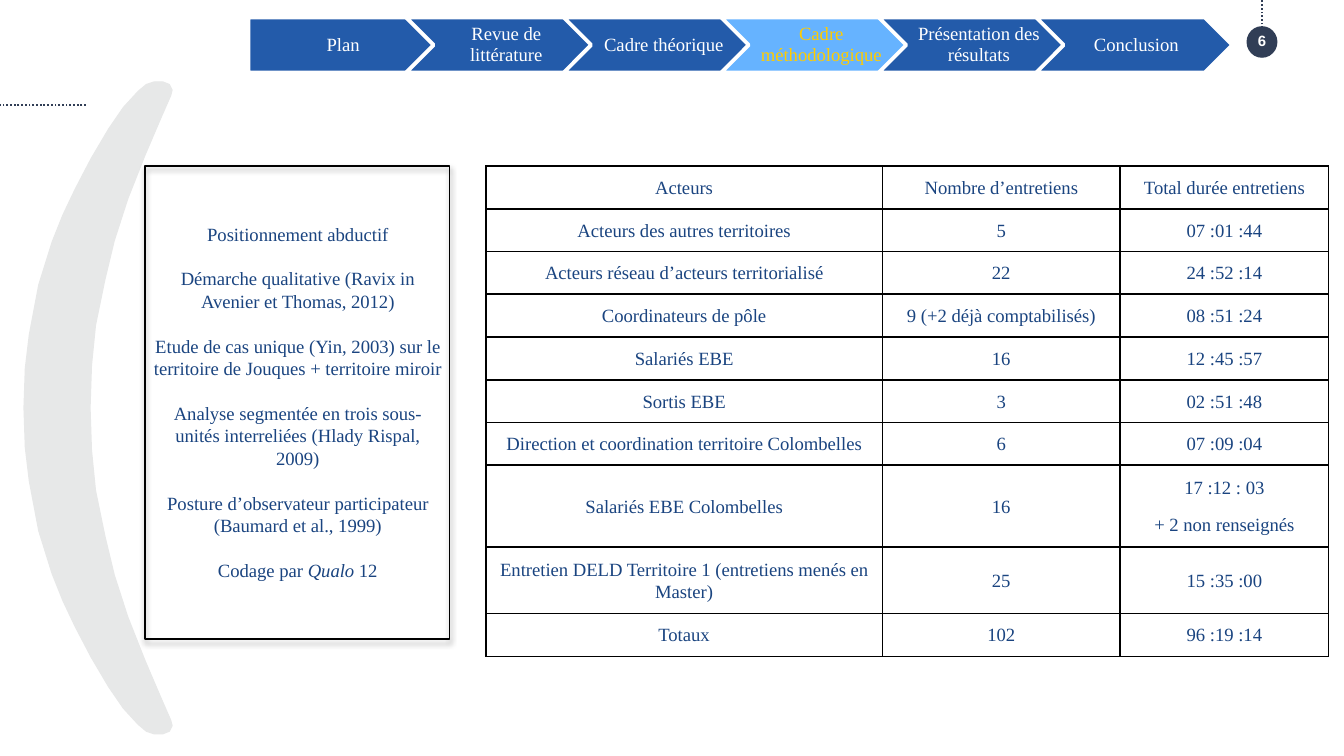
from lxml.etree import SubElement
from pptx import Presentation
from pptx.dml.color import RGBColor as Color
from pptx.enum.dml import MSO_LINE as Dash
from pptx.enum.shapes import MSO_CONNECTOR as Connector, MSO_SHAPE as Shape
from pptx.enum.text import MSO_ANCHOR as Anchor, PP_ALIGN as Align
from pptx.oxml import parse_xml
from pptx.oxml.ns import nsdecls, qn
from pptx.util import Inches, Pt

WHITE = Color(0xFF, 0xFF, 0xFF)
BLACK = Color(0x00, 0x00, 0x00)
NAVY = Color(0x31, 0x3E, 0x56)
BLUE = Color(0x23, 0x5B, 0xAA)
SKY = Color(0x66, 0xB3, 0xFF)
GOLD = Color(0xFF, 0xCC, 0x00)
INK = Color(0x1A, 0x44, 0x80)
MIST = Color(0xE7, 0xE8, 0xE8)

COLUMNS, ROWS = 100, 56.25
UNIT = Inches(0.1)
FINE = 100

STEPS = ["Plan", "Revue de littérature", "Cadre théorique", "Cadre méthodologique",
         "Présentation des résultats", "Conclusion"]
CURRENT_STEP = "Cadre méthodologique"

METHOD = [
    "Positionnement abductif",
    "Démarche qualitative (Ravix in Avenier et Thomas, 2012)",
    "Etude de cas unique (Yin, 2003) sur le territoire de Jouques + territoire miroir",
    "Analyse segmentée en trois sous-unités interreliées (Hlady Rispal, 2009)",
    "Posture d’observateur participateur (Baumard et al., 1999)",
    "Codage par *Qualo* 12",
]

INTERVIEWS = [
    ("Acteurs", "Nombre d’entretiens", "Total durée entretiens"),
    ("Acteurs des autres territoires", "5", "07 :01 :44"),
    ("Acteurs réseau d’acteurs territorialisé", "22", "24 :52 :14"),
    ("Coordinateurs de pôle", "9 (+2 déjà comptabilisés)", "08 :51 :24"),
    ("Salariés EBE", "16", "12 :45 :57"),
    ("Sortis EBE", "3", "02 :51 :48"),
    ("Direction et coordination territoire Colombelles", "6", "07 :09 :04"),
    ("Salariés EBE Colombelles", "16", "17 :12 : 03\n+ 2 non renseignés"),
    ("Entretien DELD Territoire 1 (entretiens menés en Master)", "25", "15 :35 :00"),
    ("Totaux", "102", "96 :19 :14"),
]
COLUMN_WIDTHS = [29.5, 17.7, 15.5]
ROW_HEIGHTS = [0] * 6 + [2.7] + [0] * 3

ARC_MIDDLE = 30.35
ARC_UPPER_HALF = [
    (6.7, 30.3), (6.8, 27.2), (7.1, 24.2), (7.8, 20.8), (8.5, 17.9), (9.5, 14.8),
    (10.8, 11.5), (12, 8.7), (12.7, 7.1), (12.8, 6.7), (12.6, 6.3), (12.1, 6.1),
    (11.5, 6.1), (10.9, 6.3), (10.3, 6.8), (9.2, 8), (8.1, 9.6), (6.8, 11.8),
    (5.6, 14.1), (4.7, 16), (3.9, 18), (2.9, 21.2), (2.2, 24.9), (1.9, 27.4), (1.8, 30.3),
]


def grid(*lengths):
    return [int(length * UNIT) for length in lengths]


def write(frame, paragraphs, size=10, font="Times New Roman", color=INK, bold=None,
          spacing=None, before=0, after=0, insets=(0, 0, 0, 0)):
    frame.word_wrap = True
    frame.vertical_anchor = Anchor.MIDDLE
    (frame.margin_left, frame.margin_top,
     frame.margin_right, frame.margin_bottom) = grid(*insets)
    for index, text in enumerate(paragraphs):
        para = frame.add_paragraph() if index else frame.paragraphs[0]
        para.alignment = Align.CENTER
        para.line_spacing = spacing
        para.space_after = Pt(after)
        if index:
            para.space_before = Pt(before)
        for part, words in enumerate(text.split("*")):
            span = para.add_run()
            span.text = words
            span.font.size = Pt(size)
            span.font.name = font
            span.font.color.rgb = color
            span.font.bold = bold
            if part % 2:
                span.font.italic = True


class SlideBuilder:
    def __init__(self, deck):
        self.page = deck.slides.add_slide(deck.slide_layouts[6])
        self.shapes = self.page.shapes

    def paint(self, box, fill=None, line=None, width=1):
        box.shadow.inherit = False
        if fill is None:
            box.fill.background()
        else:
            box.fill.solid()
            box.fill.fore_color.rgb = fill
        if line is None:
            box.line.fill.background()
        else:
            box.line.color.rgb = line
            box.line.width = Pt(width)
        return box

    def shape(self, kind, place, **style):
        return self.paint(self.shapes.add_shape(kind, *grid(*place)), **style)

    def text(self, place, paragraphs, **style):
        write(self.shapes.add_textbox(*grid(*place)).text_frame, paragraphs, **style)

    def outline(self, points, **style):
        start, *others = [(x * FINE, y * FINE) for x, y in points]
        builder = self.shapes.build_freeform(*start, scale=UNIT / FINE)
        builder.add_line_segments(others, close=True)
        return self.paint(builder.convert_to_shape(), **style)

    def dotted_line(self, *ends):
        line = self.shapes.add_connector(Connector.STRAIGHT, *grid(*ends))
        line.line.color.rgb = NAVY
        line.line.width = Pt(1)
        line.line.dash_style = Dash.ROUND_DOT
        SubElement(line._element.spPr, qn("a:effectLst"))

    def shadow(self, box, blur, distance, alpha):
        effects = box._element.spPr.find(qn("a:effectLst"))
        effects.append(parse_xml(
            f'<a:outerShdw {nsdecls("a")} blurRad="{Pt(blur)}" dist="{Pt(distance)}" '
            f'dir="5400000" rotWithShape="0"><a:srgbClr val="{BLACK}">'
            f'<a:alpha val="{alpha * 1000}"/></a:srgbClr></a:outerShdw>'))

    def border(self, cell):
        properties = cell._tc.get_or_add_tcPr()
        for index, side in enumerate("LRTB"):
            properties.insert(index, parse_xml(
                f'<a:ln{side} {nsdecls("a")} w="{Pt(1)}"><a:solidFill>'
                f'<a:srgbClr val="{BLACK}"/></a:solidFill></a:ln{side}>'))

    def table(self, place, rows, widths, heights):
        holder = self.shapes.add_table(len(rows), len(widths), *grid(*place))
        table = holder.table
        table.first_row = table.horz_banding = False
        for column, width in zip(table.columns, grid(*widths)):
            column.width = width
        for row, height, texts in zip(table.rows, grid(*heights), rows):
            row.height = height
            for cell, text in zip(row.cells, texts):
                write(cell.text_frame, text.split("\n"), spacing=1.07, after=8)
                cell.vertical_anchor = Anchor.MIDDLE
                (cell.margin_left, cell.margin_top,
                 cell.margin_right, cell.margin_bottom) = grid(0.7, 0.7, 0.7, 0.7)
                cell.fill.background()
                self.border(cell)
        holder.height = grid(place[-1])[0]

    def steps(self, left, top, width, height, pitch):
        for index, name in enumerate(STEPS):
            active = name == CURRENT_STEP
            kind = Shape.CHEVRON if index else Shape.PENTAGON
            box = self.shape(kind, (left + index * pitch, top, width, height),
                             fill=SKY if active else BLUE, line=WHITE, width=2)
            write(box.text_frame, [name], color=GOLD if active else WHITE, spacing=0.9,
                  insets=(0.4 if index else 0.6, 0.3, 0.1, 0.3))


def main():
    deck = Presentation()
    deck.slide_width, deck.slide_height = grid(COLUMNS, ROWS)
    slide = SlideBuilder(deck)

    lower_half = [(x, 2 * ARC_MIDDLE - y) for x, y in reversed(ARC_UPPER_HALF)]
    slide.outline(ARC_UPPER_HALF + lower_half, fill=MIST, line=MIST, width=0.75)

    slide.shape(Shape.OVAL, (92.75, 1.95, 2.3, 2.35), fill=NAVY)
    slide.dotted_line(93.9, 2.1, 93.9, 0)
    slide.dotted_line(6.4, 7.8, 0, 7.8)
    slide.text((91.4, 2.45, 5, 1.2), ["6"], size=8, font="Arial", color=WHITE, bold=True)

    slide.table((36.15, 12.35, 62.7, 35.2), INTERVIEWS, COLUMN_WIDTHS, ROW_HEIGHTS)
    slide.steps(18.5, 1.3, 14.6, 4.1, pitch=11.72)

    frame = slide.shape(Shape.RECTANGLE, (10.8, 12.35, 22.65, 35.2), line=BLACK)
    slide.shadow(frame, blur=3.1, distance=1.8, alpha=35)
    slide.text((11.4, 15.6, 21.5, 28.6), METHOD, before=12)

    deck.save("out.pptx")


if __name__ == "__main__":
    main()
